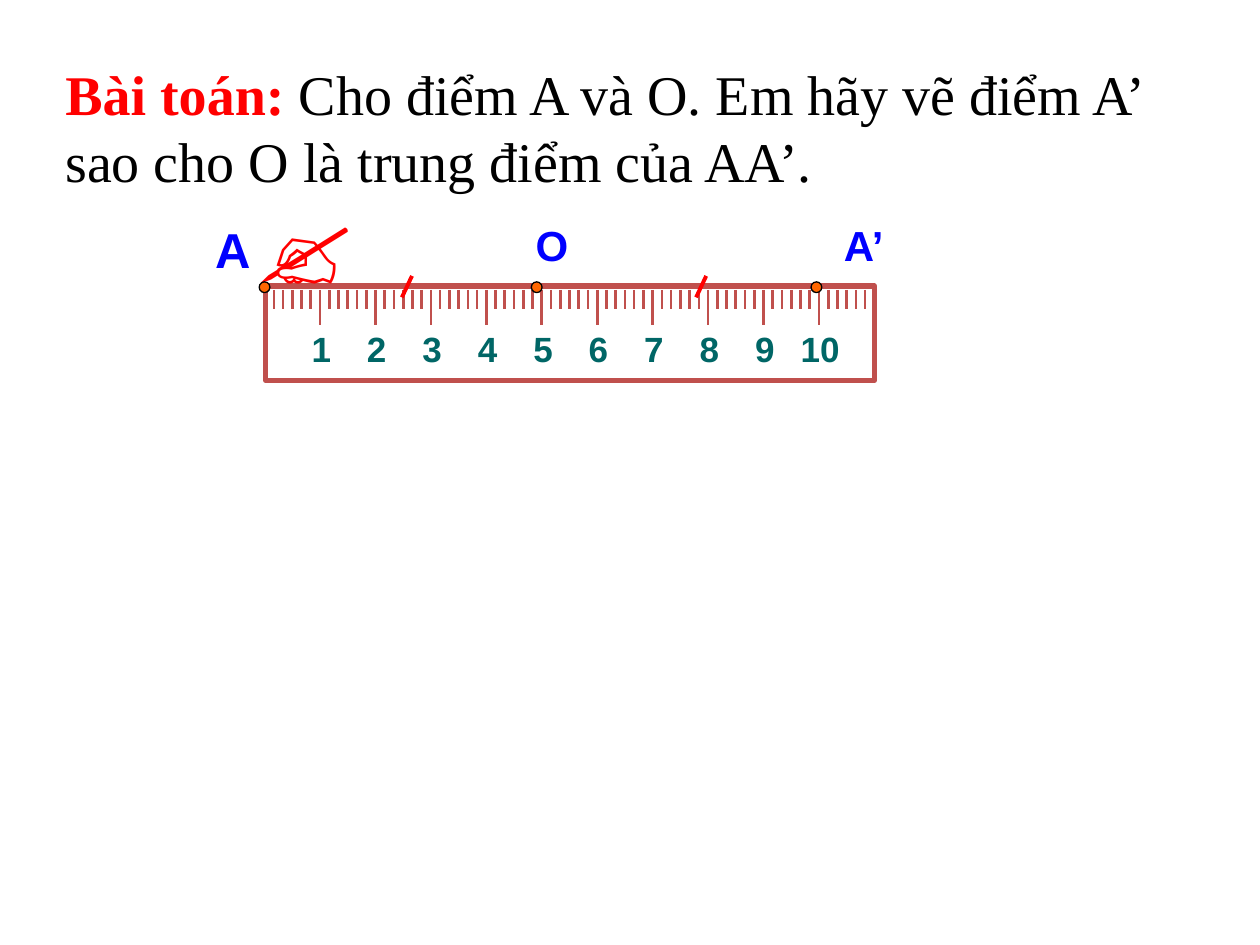
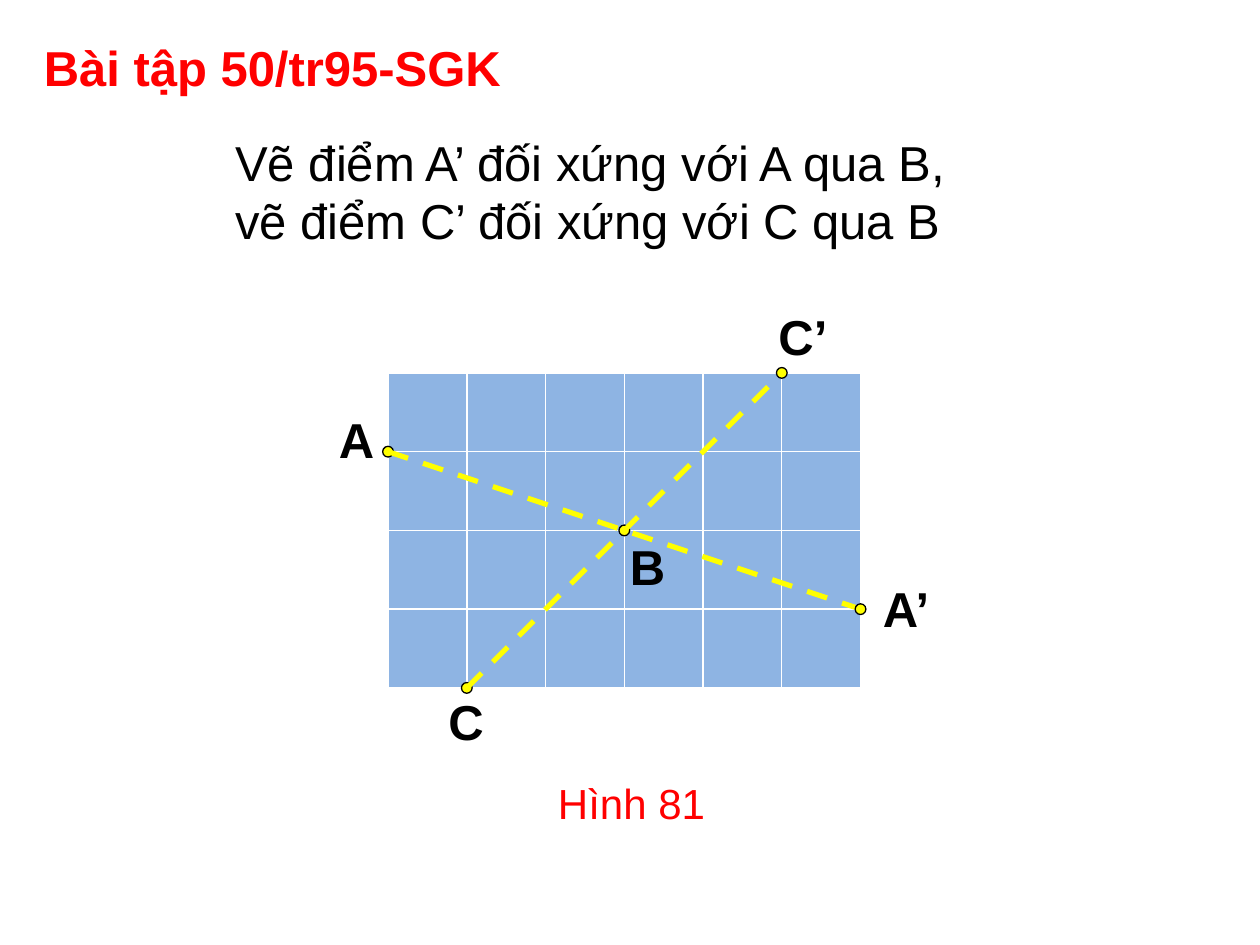
"""Build two geometry slides about point symmetry."""
import dataclasses

import lxml.etree
import pptx
import pptx.dml.color
import pptx.enum.dml
import pptx.enum.shapes
import pptx.enum.text
import pptx.oxml.ns
import pptx.util

ALIGN = pptx.enum.text.PP_ALIGN
SHAPE = pptx.enum.shapes.MSO_SHAPE


@dataclasses.dataclass(frozen=True)
class Theme:
    """Hold the colours, type sizes and fonts of the deck."""
    red: str = "FF0000"
    blue: str = "0000FF"
    black: str = "000000"
    white: str = "FFFFFF"
    teal: str = "006666"
    brick: str = "C0504D"
    orange: str = "FF6600"
    yellow: str = "FFFF00"
    sky: str = "8EB4E3"
    huge: int = 60
    lead: int = 32
    large: int = 28
    mid: int = 24
    small: int = 20
    sans: str = "Arial"
    serif: str = "Times New Roman"


THEME = Theme()
WIDE, HIGH = pptx.util.Inches(10), pptx.util.Inches(7.5)
COLS = 100
DOT = 0.85


def span(*sizes):
    """Turn lengths in slide columns (square cells) into EMU."""
    return [round(size * WIDE / COLS) for size in sizes]


def tint(code):
    """Return a colour from its hex code."""
    return pptx.dml.color.RGBColor.from_string(code)


def style(item, form):
    """Set each attribute in a dict of format values."""
    for name, value in form.items():
        setattr(item, name, value)


def font(size, color, bold=False, face=THEME.sans):
    """Return the format of a run of text."""
    return {"size": pptx.util.Pt(size), "bold": bold, "name": face, "color": color}


def text(shapes, box, paras, align=ALIGN.LEFT, wrap=True):
    """Add a text box from paragraphs of (words, format) runs."""
    frame = shapes.add_textbox(*span(*box)).text_frame
    style(frame, {"word_wrap": wrap,
                  "auto_size": pptx.enum.text.MSO_AUTO_SIZE.SHAPE_TO_FIT_TEXT})
    for index, runs in enumerate(paras):
        para = frame.add_paragraph() if index else frame.paragraphs[0]
        para.alignment = align
        for words, form in runs:
            run = para.add_run()
            run.text = words
            style(run.font, {k: v for k, v in form.items() if k != "color"})
            run.font.color.rgb = tint(form["color"])


def form(shapes, kind, box, fill, edge, width):
    """Add a filled and outlined preset shape."""
    item = shapes.add_shape(kind, *span(*box))
    item.shadow.inherit = False
    item.fill.solid()
    item.fill.fore_color.rgb = tint(fill)
    item.line.color.rgb = tint(edge)
    item.line.width = pptx.util.Pt(width)


def dot(shapes, x, y, fill):
    """Add a round point centred on a place."""
    form(shapes, SHAPE.OVAL, (x - DOT / 2, y - DOT / 2, DOT, DOT), fill, THEME.black, 0.75)


def line(shapes, start, end, color, width, dash=None):
    """Add a straight line without a shadow."""
    kind = pptx.enum.shapes.MSO_CONNECTOR.STRAIGHT
    item = shapes.add_connector(kind, *span(*start, *end))
    item.line.color.rgb = tint(color)
    style(item.line, {"width": pptx.util.Pt(width), "dash_style": dash})
    lxml.etree.SubElement(item._element.spPr, pptx.oxml.ns.qn("a:effectLst"))


def edge(cell, color, width):
    """Draw all four borders of a table cell."""
    props = cell._tc.get_or_add_tcPr()
    for index, side in enumerate("LRTB"):
        rule = lxml.etree.Element(pptx.oxml.ns.qn(f"a:ln{side}"), w=str(pptx.util.Pt(width)))
        fill = lxml.etree.SubElement(rule, pptx.oxml.ns.qn("a:solidFill"))
        lxml.etree.SubElement(fill, pptx.oxml.ns.qn("a:srgbClr"), val=color)
        props.insert(index, rule)


def board(shapes, left, top, cols, rows, size):
    """Add a table of plain square cells."""
    table = shapes.add_table(rows, cols, *span(left, top, cols * size, rows * size)).table
    style(table, {"first_row": False, "horz_banding": False})
    for cell in table.iter_cells():
        cell.fill.solid()
        cell.fill.fore_color.rgb = tint(THEME.sky)
        edge(cell, THEME.white, 1)


def ruler(shapes, left, top, unit, parts):
    """Add a ruler with ten numbered units, each split into parts."""
    group = shapes.add_group_shape().shapes
    form(group, SHAPE.RECTANGLE, (left + 0.1, top, 48.3, 7.5), THEME.white, THEME.brick, 3)
    for step in range(1, 11 * parts):
        x = left + step * unit / parts
        depth = 1.5 if step % parts else 2.8
        line(group, (x, top + 0.3), (x, top + 0.3 + depth), THEME.brick, 1.5)
    for mark in range(1, 11):
        box = (left + mark * unit - 2.7, top + 2.8, 5.6, 4.3)
        text(group, box, [[(str(mark), font(THEME.small, THEME.teal, True))]], ALIGN.CENTER)


def middle(slide):
    """Build the slide that finds a point from its midpoint."""
    shapes = slide.shapes
    text(shapes, (4.2, 4.2, 90, 11.8), [[
        ("Bài toán: ", font(THEME.lead, THEME.red, True, THEME.serif)),
        ("Cho điểm A và O. Em hãy vẽ điểm A’ sao cho O là trung điểm của AA’.",
         font(THEME.lead, THEME.black, face=THEME.serif))]])
    ruler(shapes, 21, 22.7, 4.4, 6)
    text(shapes, (19.4, 13.6, 10.8, 11), [[("✍", font(THEME.huge, THEME.red))]])
    for x in (21, 64.8, 42.6):
        dot(shapes, x, 22.8, THEME.orange)
    for x in (55.65, 32.3):
        line(shapes, (x + 0.4, 21.9), (x - 0.4, 23.6), THEME.red, 2.25)
    for name, left, width, size in (("O", 41.1, 5, THEME.mid), ("A’", 63.6, 7.5, THEME.mid),
                                    ("A", 16.1, 4.2, THEME.large)):
        text(shapes, (left, 16.9, width, size / 5), [[(name, font(size, THEME.blue, True))]],
             ALIGN.RIGHT)


def mirror(slide):
    """Build the slide that reflects two points through a third."""
    shapes = slide.shapes
    left, top, size = 30.8, 29.6, 6.25
    plain, bold = font(THEME.large, THEME.black), font(THEME.large, THEME.black, True)
    nodes = {"A": (0, 1), "B": (3, 2), "C": (1, 4), "A’": (6, 3), "C’": (5, 0)}
    spots = {name: (left + col * size, top + row * size) for name, (col, row) in nodes.items()}
    tags = {"A": (25.9, 32, 4.9), "B": (49, 42.1, 4.9), "C": (34.6, 54.4, 4.8),
            "A’": (69.1, 45.4, 5.7), "C’": (60.8, 23.8, 5.9)}
    text(shapes, (2.5, 2.5, 38.4, 5.7),
         [[("Bài tập 50/tr95-SGK", font(THEME.large, THEME.red, True))]], wrap=False)
    board(shapes, left, top, 6, 4, size)
    text(shapes, (17.7, 10, 60.6, 10.3),
         [[("Vẽ điểm A’ đối xứng với A qua B,", plain)],
          [("vẽ điểm C’ đối xứng với C qua B", plain)]], wrap=False)
    for name in "ABC":
        dot(shapes, *spots[name], THEME.yellow)
    for name in "AC":
        line(shapes, spots[name], spots[name + "’"], THEME.yellow, 3,
             pptx.enum.dml.MSO_LINE.DASH)
        dot(shapes, *spots[name + "’"], THEME.yellow)
    for name, (x, y, width) in tags.items():
        text(shapes, (x, y, width, 5.7), [[(name, bold)]], wrap=False)
    text(shapes, (43.3, 61.2, 13.7, 5), [[("Hình 81", font(THEME.mid, THEME.red))]], wrap=False)


def main():
    """Make the deck and save it."""
    deck = pptx.Presentation()
    style(deck, {"slide_width": WIDE, "slide_height": HIGH})
    for build in (middle, mirror):
        build(deck.slides.add_slide(deck.slide_layouts[6]))
    deck.save("out.pptx")


if __name__ == "__main__":
    main()
